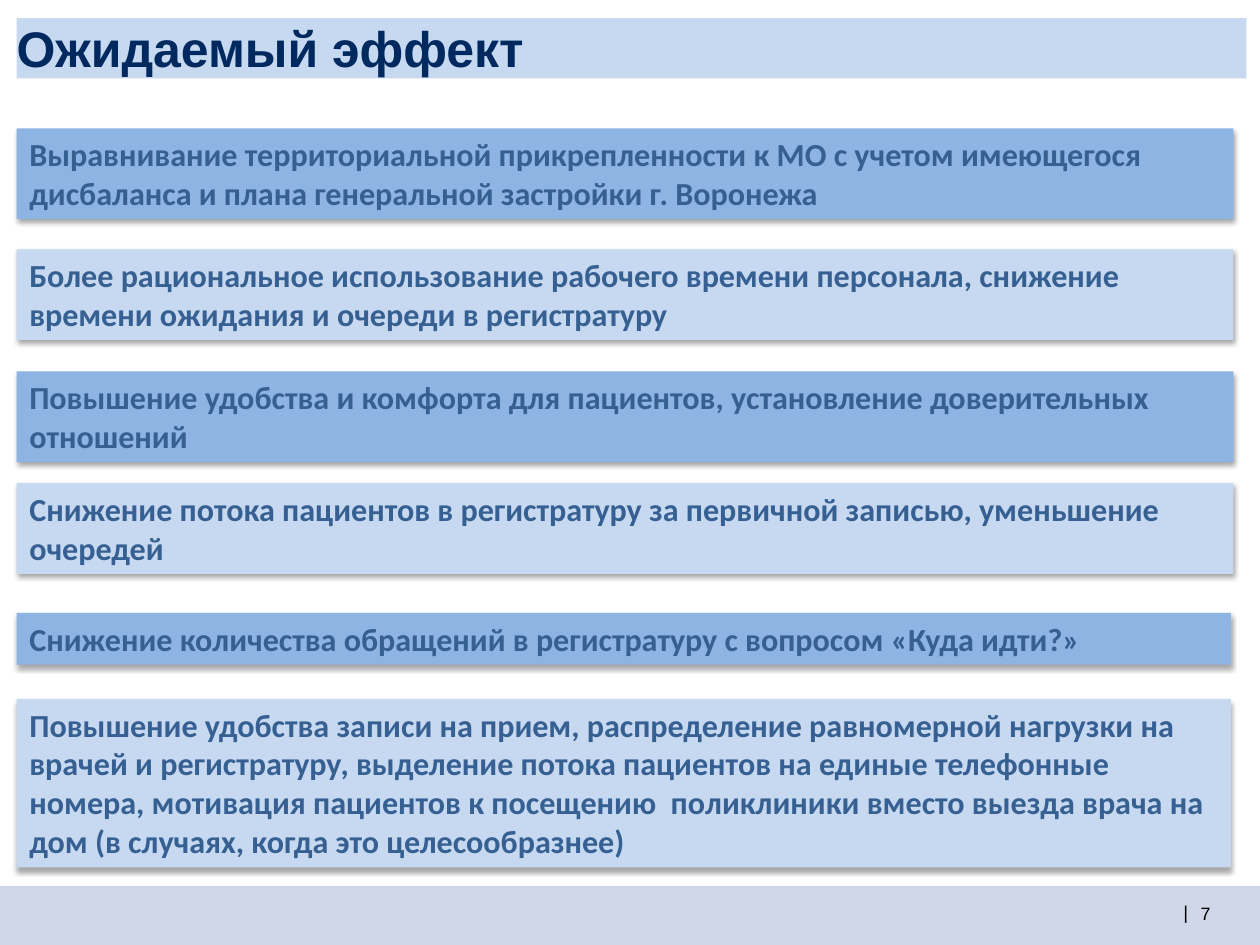
from dataclasses import dataclass

from lxml import etree
from pptx import Presentation
from pptx.dml.color import RGBColor
from pptx.enum.shapes import MSO_SHAPE as Shape
from pptx.enum.text import MSO_ANCHOR as Anchor, MSO_AUTO_SIZE as Auto, PP_ALIGN as Align
from pptx.oxml.ns import qn
from pptx.util import Inches, Pt

TITLE = "Ожидаемый эффект"
PAGE = "7"
# top, lines of text, width, text
EFFECTS = [
    (1.0, 2, 9.47, "Выравнивание территориальной прикрепленности к МО с учетом "
     "имеющегося дисбаланса и плана генеральной застройки г. Воронежа"),
    (1.94, 2, 9.47, "Более рациональное использование рабочего времени персонала, "
     "снижение времени ожидания и очереди в регистратуру"),
    (2.89, 2, 9.47, "Повышение удобства и комфорта для пациентов, установление "
     "доверительных отношений"),
    (3.76, 2, 9.47, "Снижение потока пациентов в регистратуру за первичной записью, "
     "уменьшение очередей"),
    (4.77, 1, 9.45, "Снижение количества обращений в регистратуру с вопросом «Куда идти?»"),
    (5.44, 4, 9.45, "Повышение удобства записи на прием, распределение равномерной "
     "нагрузки на врачей и регистратуру, выделение потока пациентов на единые "
     "телефонные номера, мотивация пациентов к посещению  поликлиники вместо выезда "
     "врача на дом (в случаях, когда это целесообразнее)"),
]


@dataclass(frozen=True)
class Theme:
    dark: str = "8EB4E3"
    light: str = "C6D9F1"
    band: str = "D0D7E8"
    title: str = "00295F"
    body: str = "376092"
    page: str = "000000"
    head: str = "Arial"
    text: str = "Calibri"
    big: int = 28
    mid: int = 18
    small: int = 10


T = Theme()
WIDE, HIGH = Pt(706), Pt(529.5)  # 4:3
LEFT, FOOT = 0.13, 0.46
PAD, LINE = 0.1, 0.303


def paint(shape, color):
    shape.fill.solid()
    shape.fill.fore_color.rgb = RGBColor.from_string(color)


def frame(shape, inset=None, fit=Auto.SHAPE_TO_FIT_TEXT):
    box = shape.text_frame
    box.word_wrap = True
    box.auto_size = fit
    box.vertical_anchor = Anchor.TOP
    if inset is not None:
        box.margin_left = box.margin_right = Inches(inset)
        box.margin_top = box.margin_bottom = Inches(inset)
    para = box.paragraphs[0]
    para.alignment = Align.LEFT
    return para


def write(para, text, font=T.text, size=T.mid, color=T.body, bold=False):
    run = para.add_run()
    run.text = text
    run.font.name, run.font.size, run.font.bold = font, Pt(size), bold
    run.font.color.rgb = RGBColor.from_string(color)
    return run


def block(slide, left, top, wide, high, color):
    shape = slide.shapes.add_shape(
        Shape.RECTANGLE, Inches(left), Inches(top), Inches(wide), Inches(high))
    shape.shadow.inherit = False
    paint(shape, color)
    shape.line.fill.background()
    return shape


def shade(shape):
    """Drop a soft shadow straight down."""
    effects = shape._element.spPr.find(qn("a:effectLst"))
    outer = etree.SubElement(effects, qn("a:outerShdw"), blurRad=str(Pt(3.1)),
                             dist=str(Pt(1.8)), dir="5400000", rotWithShape="0")
    color = etree.SubElement(outer, qn("a:srgbClr"), val="000000")
    etree.SubElement(color, qn("a:alpha"), val="35000")


def main():
    deck = Presentation()
    deck.slide_width, deck.slide_height = WIDE, HIGH
    slide = deck.slides.add_slide(deck.slide_layouts[5])

    title = slide.shapes.title
    title.left, title.top = Inches(LEFT), Inches(0.14)
    title.width, title.height = Inches(9.57), Inches(0.47)
    paint(title, T.light)
    write(frame(title, inset=0, fit=Auto.NONE), TITLE,
          font=T.head, size=T.big, color=T.title, bold=True)

    block(slide, 0, HIGH.inches - FOOT, WIDE.inches, FOOT, T.band)
    page = slide.shapes.add_textbox(Inches(9.21), Inches(7.02), Inches(0.41), Inches(0.2))
    para = frame(page, inset=0)
    para.line_spacing = Pt(13.7)
    bar = write(para, "| ", font=T.head, color=T.page)
    bar.font._element.set("baseline", "2000")
    bar.font._element.set("spc", "200")
    write(para, PAGE, font=T.head, size=T.small, color=T.page)

    for i, (top, lines, wide, text) in enumerate(EFFECTS):
        color = T.light if i % 2 else T.dark
        card = block(slide, LEFT, top, wide, PAD + LINE * lines, color)
        shade(card)
        write(frame(card), text, bold=True)

    deck.save("out.pptx")


if __name__ == "__main__":
    main()
